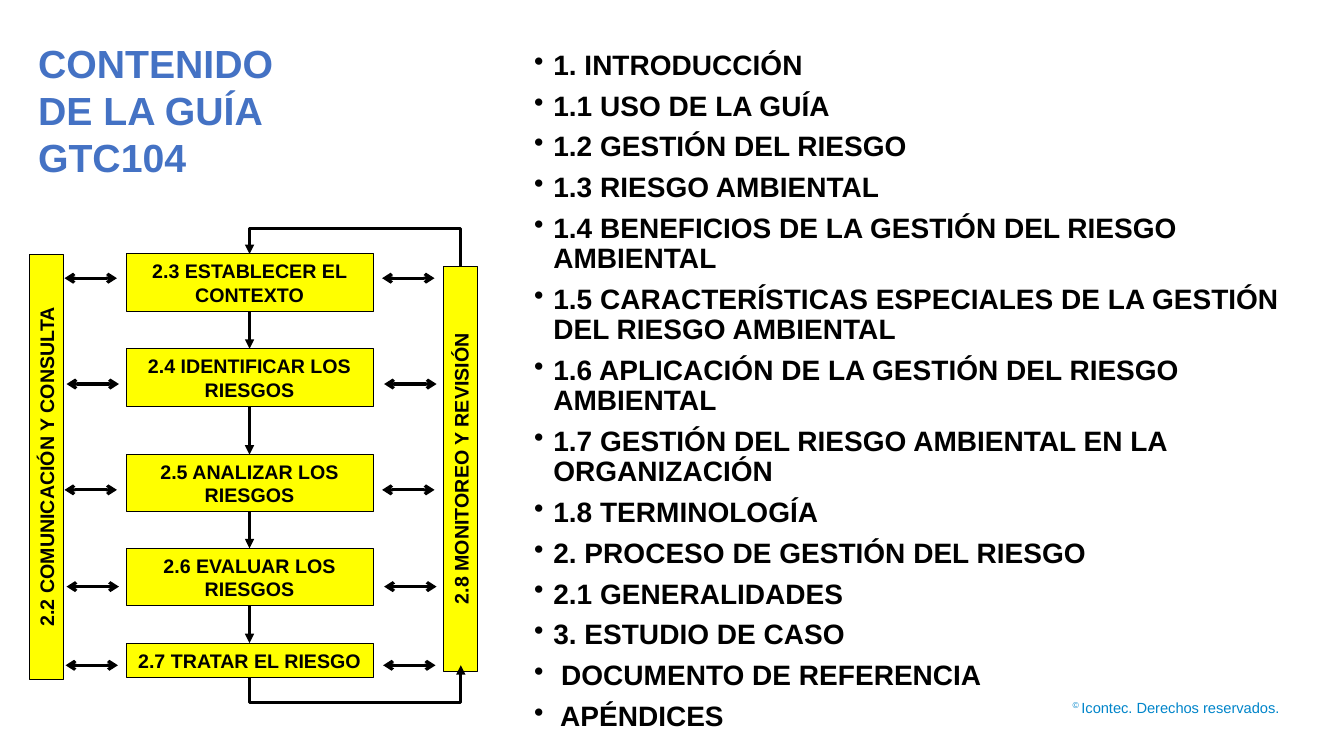
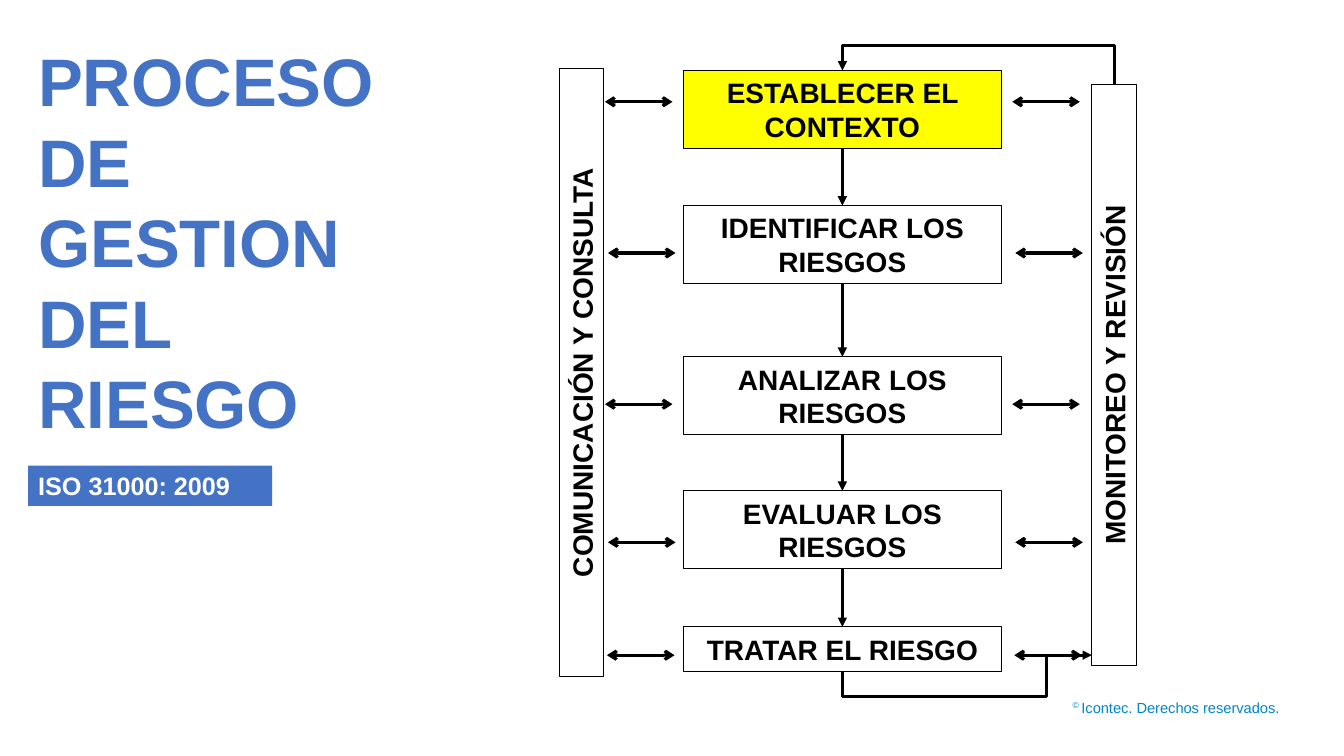
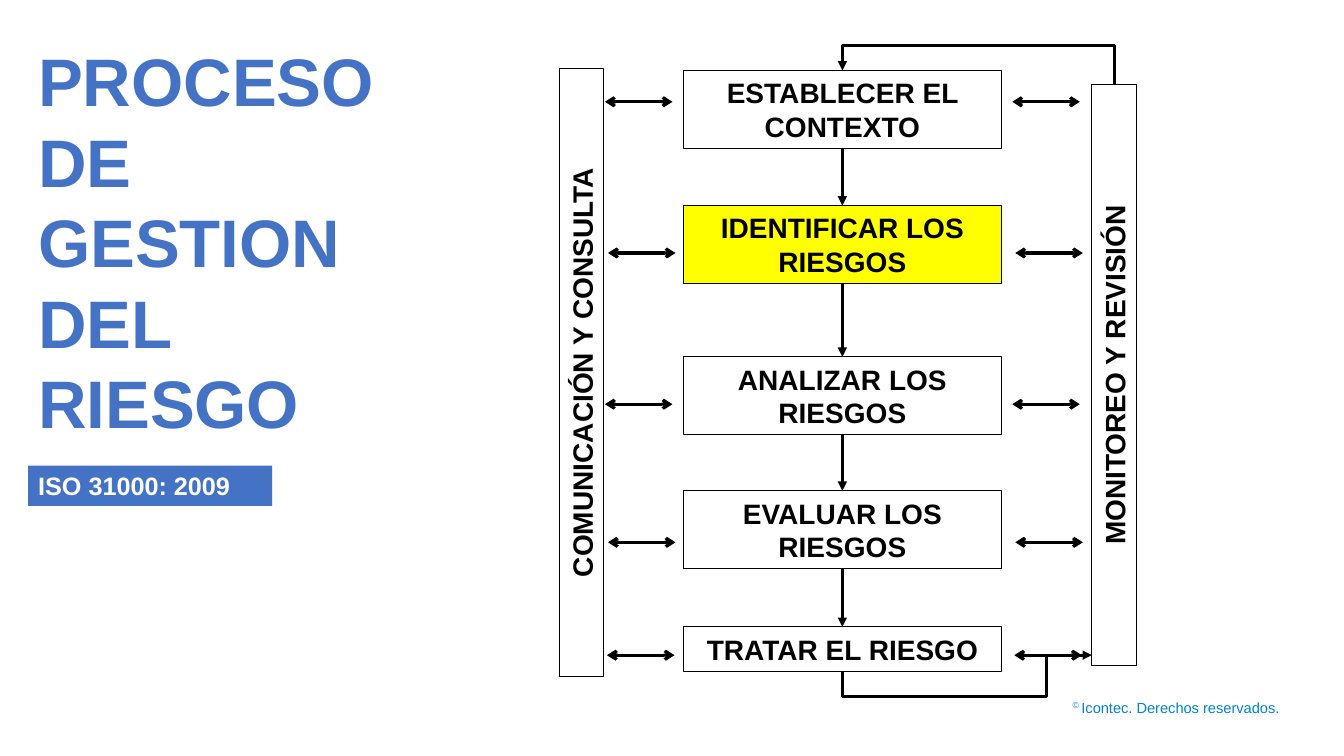
from dataclasses import dataclass

from pptx import Presentation
from pptx import util as u
from pptx.dml.color import RGBColor
from pptx.enum import shapes, text
from pptx.oxml.ns import qn
from lxml import etree

BLUE, YELLOW, BLACK, WHITE, CYAN = "4472C4", "FFFF00", "000000", "FFFFFF", "0085CA"


def rgb(value):
    return RGBColor.from_string(value)


def inches(*values):
    return [u.Inches(value) for value in values]


class Deck:
    """House style and the slide being built."""

    font = "Arial"

    def __init__(self):
        self.prs = Presentation()
        self.prs.slide_width, self.prs.slide_height = inches(13.33, 7.5)
        self.slide = None

    def new_slide(self):
        self.slide = self.prs.slides.add_slide(self.prs.slide_layouts[6])
        self.footer()

    def style(self, paragraph, size, color, bold=True, align=text.PP_ALIGN.LEFT):
        paragraph.alignment = align
        font = paragraph.font
        font.name, font.size, font.bold = self.font, u.Pt(size), bold
        font.color.rgb = rgb(color)

    def textbox(self, at):
        frame = self.slide.shapes.add_textbox(*inches(*at)).text_frame
        frame.word_wrap = True
        return frame

    def footer(self):
        notice = self.textbox((10.47, 6.88, 2.32, 0.29)).paragraphs[0]
        mark = notice.add_run()
        mark.text = "© "
        mark.font._element.set("baseline", "30000")
        notice.add_run().text = "Icontec. Derechos reservados."
        self.style(notice, 10.5, CYAN, bold=False, align=text.PP_ALIGN.RIGHT)

    def title(self, words, size, width, height):
        heading = self.textbox((0.28, 0.34, width, height)).paragraphs[0]
        heading.text = words
        self.style(heading, size, BLUE)

    def bullets(self, at, items, size):
        frame = self.textbox(at)
        for index, item in enumerate(items):
            entry = frame.add_paragraph() if index else frame.paragraphs[0]
            entry.text = item
            entry.line_spacing = 0.9
            entry.space_before = u.Pt(7.5 if index else 0)
            props = entry._p.get_or_add_pPr()
            props.set("marL", str(u.Inches(0.19)))
            props.set("indent", str(u.Inches(-0.19)))
            etree.SubElement(props, qn("a:buChar")).set("char", "•")
            self.style(entry, size, BLACK)

    def box(self, at, words, size, fill=None, line=BLACK, color=BLACK,
            align=text.PP_ALIGN.CENTER):
        shape = self.slide.shapes.add_shape(shapes.MSO_SHAPE.RECTANGLE, *inches(*at))
        shape.shadow.inherit = False
        if fill:
            shape.fill.solid()
            shape.fill.fore_color.rgb = rgb(fill)
        else:
            shape.fill.background()
        if line:
            shape.line.color.rgb = rgb(line)
            shape.line.width = u.Pt(0.75)
        else:
            shape.line.fill.background()
        frame = shape.text_frame
        frame.word_wrap = True
        frame.vertical_anchor = text.MSO_ANCHOR.MIDDLE
        frame.text = words
        self.style(frame.paragraphs[0], size, color, align=align)
        return shape

    def upright_bar(self, at, words, size, fill=None):
        """Bar that fills the area `at`, with its text reading upwards."""
        left, top, width, height = at
        shift = (height - width) / 2
        bar = self.box((left - shift, top + shift, height, width), words, size, fill)
        bar.rotation = 270

    def line(self, start, end, head=None, tail="triangle",
             kind=shapes.MSO_CONNECTOR.STRAIGHT):
        link = self.slide.shapes.add_connector(kind, *inches(*start, *end))
        link.line.color.rgb = rgb(BLACK)
        link.line.width = u.Pt(2.25)
        ends = link.line._get_or_add_ln()
        for tag, arrow in (("a:headEnd", head), ("a:tailEnd", tail)):
            if arrow:
                etree.SubElement(ends, qn(tag)).set("type", arrow)
        etree.SubElement(link._element.spPr, qn("a:effectLst"))
        return link

    def detour(self, start, end, via_y, via_x=None):
        """Elbow arrow that leaves vertically and runs along via_y."""
        (x1, y1), (x2, y2) = start, end
        half_w, half_h = abs(y2 - y1) / 2, abs(x2 - x1) / 2
        cx, cy = (x1 + x2) / 2, (y1 + y2) / 2
        # In the turned frame a leftward route flips vertically, a rightward one both ways
        leftward = x2 < x1
        side = 1 if leftward else -1
        link = self.line((cx - side * half_w, cy + half_h),
                         (cx + side * half_w, cy - half_h),
                         kind=shapes.MSO_CONNECTOR.ELBOW)
        props = link._element.spPr
        props.find(qn("a:xfrm")).set("rot", str((270 if leftward else 90) * 60000))
        bends = [(y1 - via_y) / (y1 - y2)]
        if via_x is not None:
            bends.append((via_x - x1) / (x2 - x1))
        geometry = props.find(qn("a:prstGeom"))
        geometry.set("prst", f"bentConnector{len(bends) + 2}")
        guides = geometry.find(qn("a:avLst"))
        if guides is None:
            guides = etree.SubElement(geometry, qn("a:avLst"))
        for number, bend in enumerate(bends, 1):
            guide = etree.SubElement(guides, qn("a:gd"))
            guide.set("name", f"adj{number}")
            guide.set("fmla", f"val {round(bend * 100000)}")


@dataclass
class Process:
    """Measures of one size of the risk process diagram."""
    size: int
    left: float
    width: float
    tops: tuple
    heights: tuple
    consult: tuple
    review: tuple
    arrow_ys: tuple
    arrow_lefts: tuple
    arrow_length: float
    nudges: tuple
    loop_y: float
    return_end: tuple
    return_y: float
    return_x: float = None

    def draw(self, deck, steps, consult, review, lit, bar_fill=None):
        # Side bars and steps
        deck.upright_bar(self.consult, consult, self.size, bar_fill)
        deck.upright_bar(self.review, review, self.size, bar_fill)
        for index, step in enumerate(steps):
            deck.box((self.left, self.tops[index], self.width, self.heights[index]),
                     step, self.size, YELLOW if index in lit else None)

        # Arrows from step to step
        middle = self.left + self.width / 2
        bottoms = [top + height for top, height in zip(self.tops, self.heights)]
        for bottom, next_top in zip(bottoms, self.tops[1:]):
            deck.line((middle, bottom), (middle, next_top))

        # Two-way arrows between steps and bars
        for left in self.arrow_lefts:
            for y, nudge in zip(self.arrow_ys, self.nudges):
                x = left + nudge
                deck.line((x, y), (x + self.arrow_length, y), "arrow", "arrow")

        # Loop between review and the steps
        review_x = self.review[0] + self.review[2] / 2
        deck.detour((review_x, self.review[1]), (middle, self.tops[0]), self.loop_y)
        deck.detour((middle, bottoms[-1]), self.return_end, self.return_y, self.return_x)


SMALL = Process(
    size=14, left=1.25, width=2.45,
    tops=(2.52, 3.46, 4.51, 5.44, 6.38), heights=(0.57,) * 4 + (0.34,),
    consult=(0.29, 2.52, 0.34, 4.22), review=(4.4, 2.64, 0.34, 4.02),
    arrow_ys=(2.76, 3.81, 4.86, 5.82, 6.6), arrow_lefts=(0.64, 3.79),
    arrow_length=0.52, nudges=(0, 0.02, 0, 0.02, 0.01),
    loop_y=2.27, return_end=(4.57, 6.6), return_y=6.97)

LARGE = Process(
    size=20, left=6.78, width=3.15,
    tops=(0.7, 2.04, 3.54, 4.87, 6.22), heights=(0.77,) * 4 + (0.44,),
    consult=(5.55, 0.68, 0.44, 6.03), review=(10.83, 0.84, 0.44, 5.76),
    arrow_ys=(1.01, 2.51, 4.01, 5.38, 6.5), arrow_lefts=(6, 10.04),
    arrow_length=0.67, nudges=(0, 0.03, 0, 0.03, 0.02),
    loop_y=0.45, return_end=(10.83, 6.5), return_y=6.91, return_x=10.38)

STEPS = ("ESTABLECER EL CONTEXTO", "IDENTIFICAR LOS RIESGOS", "ANALIZAR LOS RIESGOS",
         "EVALUAR LOS RIESGOS", "TRATAR EL RIESGO")
CONSULT, REVIEW = "COMUNICACIÓN Y CONSULTA", "MONITOREO Y REVISIÓN"

CONTENTS = (
    "1. INTRODUCCIÓN",
    "1.1 USO DE LA GUÍA",
    "1.2 GESTIÓN DEL RIESGO",
    "1.3 RIESGO AMBIENTAL",
    "1.4 BENEFICIOS DE LA GESTIÓN DEL RIESGO AMBIENTAL",
    "1.5 CARACTERÍSTICAS ESPECIALES DE LA GESTIÓN DEL RIESGO AMBIENTAL",
    "1.6 APLICACIÓN DE LA GESTIÓN DEL RIESGO AMBIENTAL",
    "1.7 GESTIÓN DEL RIESGO AMBIENTAL EN LA ORGANIZACIÓN",
    "1.8 TERMINOLOGÍA",
    "2. PROCESO DE GESTIÓN DEL RIESGO",
    "2.1 GENERALIDADES",
    "3. ESTUDIO DE CASO",
    " DOCUMENTO DE REFERENCIA",
    " APÉNDICES",
)


def contents_slide(deck):
    deck.new_slide()
    deck.title("CONTENIDO DE LA GUÍA GTC104", 28, 3.08, 1.51)
    deck.bullets((5.2, 0.46, 8.13, 6.9), CONTENTS, 20)
    numbered = [f"2.{number} {step}" for number, step in enumerate(STEPS, 3)]
    SMALL.draw(deck, numbered, f"2.2 {CONSULT}", f"2.8 {REVIEW}",
               lit=range(len(STEPS)), bar_fill=YELLOW)


def process_slide(deck, current):
    deck.new_slide()
    deck.title("PROCESO DE GESTION DEL RIESGO", 48, 4.2, 4.14)
    deck.box((0.28, 4.62, 2.42, 0.4), "ISO 31000: 2009", 18, BLUE, line=None,
             color=WHITE, align=text.PP_ALIGN.LEFT)
    LARGE.draw(deck, STEPS, CONSULT, REVIEW, lit=(current,))


def main():
    deck = Deck()
    contents_slide(deck)
    for current in (0, 1):
        process_slide(deck, current)
    deck.prs.save("out.pptx")


if __name__ == "__main__":
    main()
